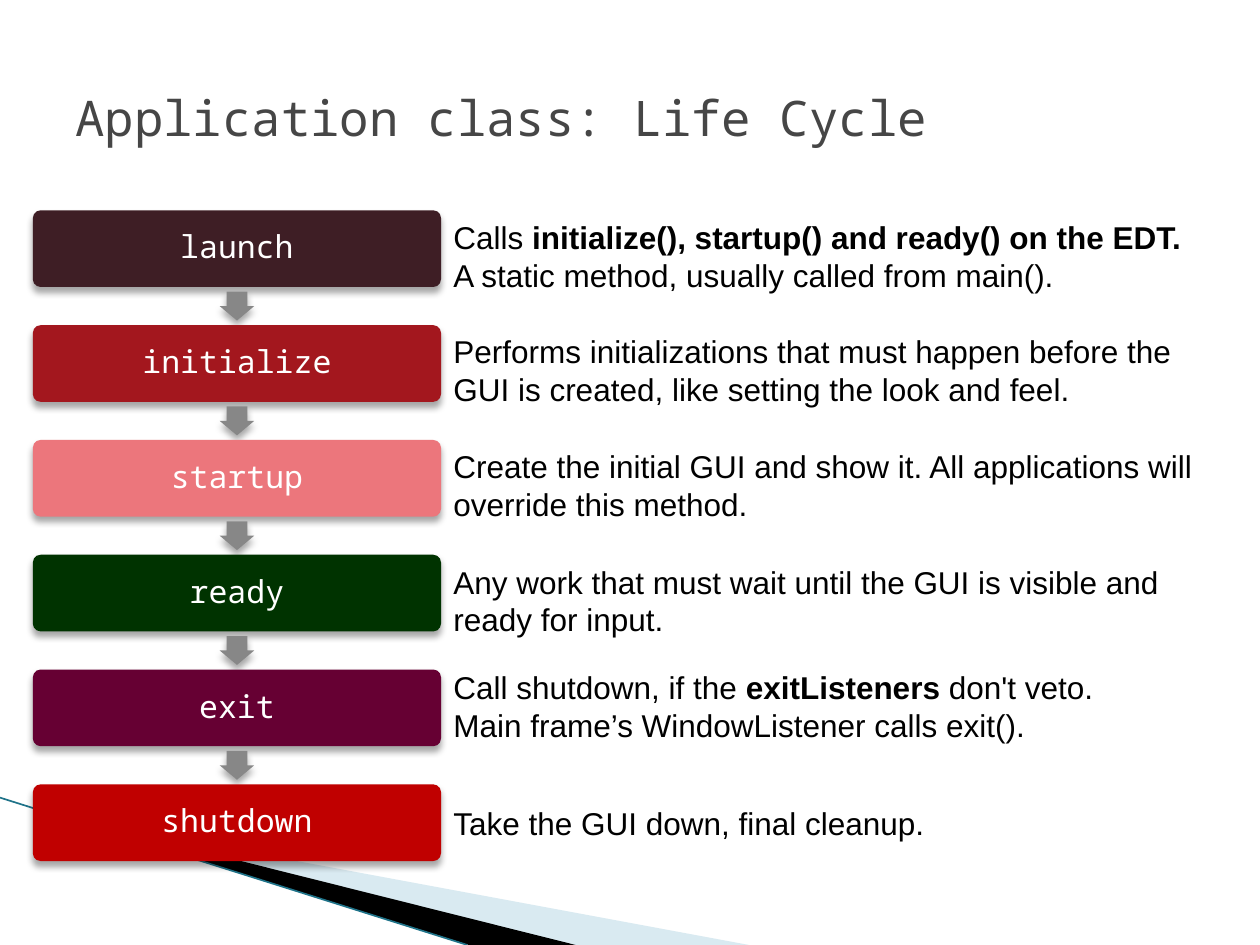
import pptx
import pptx.util
import pptx.dml.color
import pptx.enum.shapes
import pptx.enum.text
import pptx.oxml
import pptx.oxml.ns
from lxml import etree

Pt = pptx.util.Pt
SHAPE = pptx.enum.shapes.MSO_SHAPE
ALIGN = pptx.enum.text.PP_ALIGN
MIDDLE = pptx.enum.text.MSO_ANCHOR.MIDDLE
SHADOW = (
    f'<a:effectLst {pptx.oxml.ns.nsdecls("a")}>'
    '<a:outerShdw blurRad="50800" dist="38100" dir="5400000" rotWithShape="0">'
    '<a:srgbClr val="000000"><a:alpha val="35000"/></a:srgbClr>'
    '</a:outerShdw></a:effectLst>'
)


def rgb(code):
    return pptx.dml.color.RGBColor.from_string(code)


class LifeCycleSlide:
    mono, sans = "Noto Sans Mono", "Arial"
    text_size = Pt(18)

    def __init__(self, deck):
        self.slide = deck.slides.add_slide(deck.slide_layouts[5])
        self.shapes = self.slide.shapes

    def set_font(self, paragraph, name, color, size=text_size):
        paragraph.font.name = name
        paragraph.font.size = size
        paragraph.font.color.rgb = rgb(color)

    def title(self, text, left, top, width, height):
        title = self.shapes.title
        title.left, title.top, title.width, title.height = map(Pt, (left, top, width, height))
        title.text_frame.text = text
        title.text_frame.vertical_anchor = MIDDLE
        heading = title.text_frame.paragraphs[0]
        heading.alignment = ALIGN.LEFT
        self.set_font(heading, self.mono, "464646", Pt(28))

    def wedge(self, points, color, opacity=100):
        builder = self.shapes.build_freeform(*points[0], scale=Pt(1))
        builder.add_line_segments(points[1:], close=True)
        wedge = builder.convert_to_shape()
        wedge.shadow.inherit = False
        wedge.fill.solid()
        wedge.fill.fore_color.rgb = rgb(color)
        wedge.line.fill.background()
        if opacity < 100:
            tint = wedge.fill._xPr.find(".//" + pptx.oxml.ns.qn("a:srgbClr"))
            alpha = etree.SubElement(tint, pptx.oxml.ns.qn("a:alpha"))
            alpha.set("val", str(opacity * 1000))

    def line(self, x1, y1, x2, y2, color, width):
        line = self.shapes.add_connector(
            pptx.enum.shapes.MSO_CONNECTOR.STRAIGHT, Pt(x1), Pt(y1), Pt(x2), Pt(y2))
        line.line.color.rgb = rgb(color)
        line.line.width = Pt(width)
        etree.SubElement(line._element.spPr, pptx.oxml.ns.qn("a:effectLst"))

    def raised_shape(self, preset, left, top, width, height, color, adjustments):
        shape = self.shapes.add_shape(preset, Pt(left), Pt(top), Pt(width), Pt(height))
        for index, value in enumerate(adjustments):
            shape.adjustments[index] = value
        shape.fill.solid()
        shape.fill.fore_color.rgb = rgb(color)
        shape.line.fill.background()
        shape._element.spPr.append(pptx.oxml.parse_xml(SHADOW))
        return shape

    def step(self, name, left, top, width, height, color):
        step = self.raised_shape(SHAPE.ROUNDED_RECTANGLE, left, top, width, height, color, [0.1])
        step.text_frame.text = name
        step.text_frame.vertical_anchor = MIDDLE
        label = step.text_frame.paragraphs[0]
        label.alignment = ALIGN.CENTER
        label.line_spacing = 0.9
        self.set_font(label, self.mono, "FFFFFF")

    def down_arrow(self, center, top):
        length, breadth = 16.5, 19.7
        arrow = self.raised_shape(SHAPE.RIGHT_ARROW, center - length / 2, top,
                                  length, breadth, "878787", [0.6, 0.5])
        arrow.rotation = 90

    def description(self, lines, left, top, width):
        """Each line is a list of (text, bold) pieces."""
        height = 51 if top < 450 else 29
        box = self.shapes.add_textbox(Pt(left), Pt(top), Pt(width), Pt(height))
        frame = box.text_frame
        frame.word_wrap = True
        for index, pieces in enumerate(lines):
            paragraph = frame.add_paragraph() if index else frame.paragraphs[0]
            for text, bold in pieces:
                run = paragraph.add_run()
                run.text = text
                if bold:
                    run.font.bold = True
            self.set_font(paragraph, self.sans, "000000")


# Name, fill, top of the description, description
STEPS = [
    ("launch", "3E1E25", 121, [
        [("Calls ", False), ("initialize(), startup() and ready() on the EDT.", True)],
        [("A static method, usually called from main().", False)]]),
    ("initialize", "A3171E", 186, [
        [("Performs initializations that must happen before the GUI is created, "
          "like setting the look and feel.", False)]]),
    ("startup", "EC767C", 252, [
        [("Create the initial GUI and show it. All applications will "
          "override this method.", False)]]),
    ("ready", "003300", 318, [
        [("Any work that must wait until the GUI is visible and", False)],
        [("ready for input.", False)]]),
    ("exit", "660033", 378, [
        [("Call shutdown, if the ", False), ("exitListeners ", True), ("don't veto.", False)],
        [("Main frame’s WindowListener calls exit().", False)]]),
    ("shutdown", "C00000", 456, [
        [("Take the GUI down, final cleanup.", False)]]),
]
STEP_LEFT, STEP_TOP, STEP_WIDTH, STEP_HEIGHT, PITCH = 18.8, 120.2, 233.2, 43.8, 65.6


def main():
    deck = pptx.Presentation()
    deck.slide_width, deck.slide_height = Pt(720), Pt(540)
    page = LifeCycleSlide(deck)

    # Corner decoration
    page.wedge([(39.6, 468.4), (428.4, 540), (328.3, 540), (39.6, 468)], "A0CBDC", 40)
    page.wedge([(38.2, 467.3), (329, 540), (267.8, 540), (38.9, 468)], "000000")
    page.line(0, 455.8, 267.1, 540, "1F7389", 0.95)

    page.title("Application class: Life Cycle", 36, 21.6, 648, 90)

    # Chain of steps
    for index, (name, color, text_top, lines) in enumerate(STEPS):
        top = STEP_TOP + index * PITCH
        page.step(name, STEP_LEFT, top, STEP_WIDTH, STEP_HEIGHT, color)
        if index < len(STEPS) - 1:
            page.down_arrow(STEP_LEFT + STEP_WIDTH / 2, top + 44.9)
        page.description(lines, STEP_LEFT + STEP_WIDTH, text_top, 456)

    deck.save("out.pptx")


if __name__ == "__main__":
    main()
